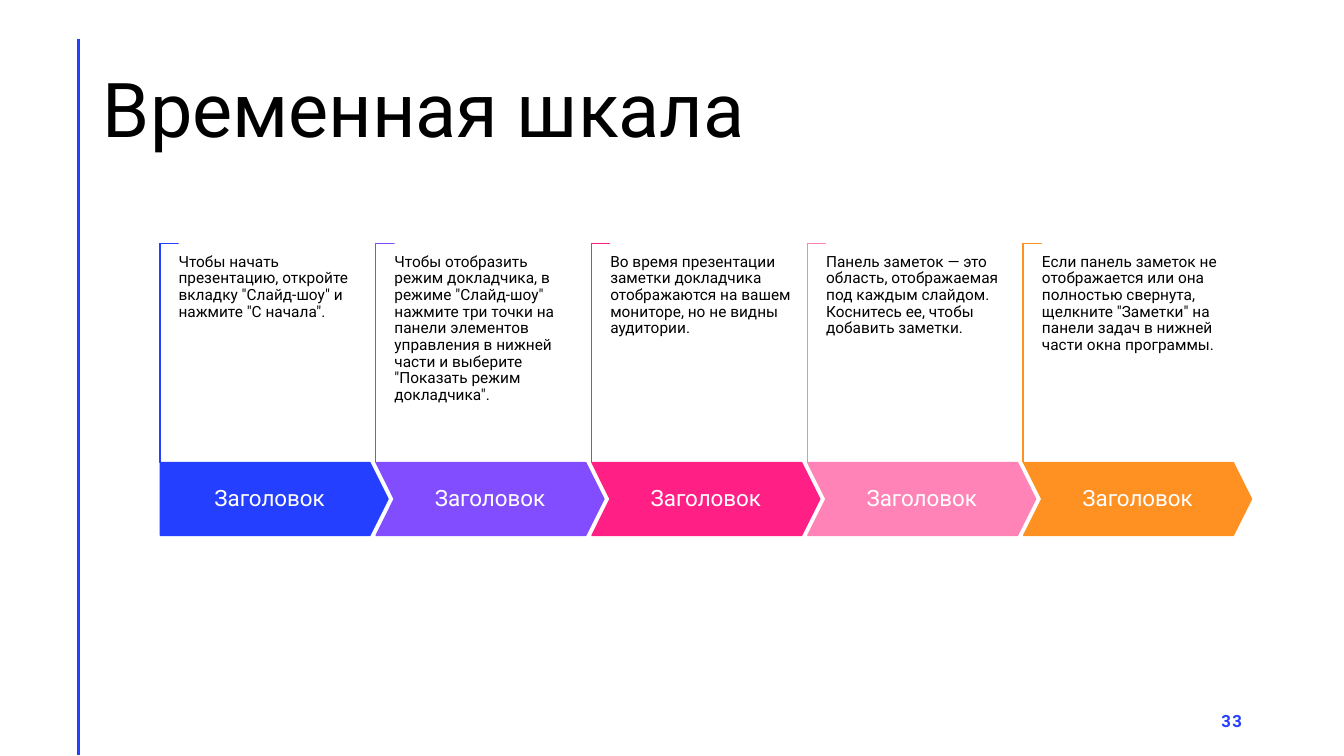
from dataclasses import dataclass
from lxml.etree import SubElement
from pptx import Presentation
from pptx.dml.color import RGBColor
from pptx.enum.shapes import MSO_CONNECTOR, MSO_SHAPE
from pptx.enum.text import MSO_ANCHOR, PP_ALIGN
from pptx.oxml.ns import qn
from pptx.util import Cm, Pt


@dataclass(frozen=True)
class Theme:
    font: str = "Roboto"
    ink: str = "000000"
    paper: str = "FFFFFF"
    accent: str = "243FFF"
    steps: tuple = ("243FFF", "814DFF", "FF1F85", "FF83B6", "FF9022")
    title_size: int = 54
    label_size: int = 16
    note_size: int = 11
    number_size: int = 12


theme = Theme()


def write(frame, words, size, color, align=PP_ALIGN.LEFT, spacing=0.9):
    frame.word_wrap = True
    paragraph = frame.paragraphs[0]
    paragraph.alignment = align
    paragraph.line_spacing = spacing
    run = paragraph.add_run()
    run.text = words
    run.font.name = theme.font
    run.font.size = Pt(size)
    run.font.color.rgb = RGBColor.from_string(color)
    return run


def paint(part, fill, line):
    part.shadow.inherit = False
    part.fill.solid()
    part.fill.fore_color.rgb = RGBColor.from_string(fill)
    part.line.color.rgb = RGBColor.from_string(line)
    part.line.width = Pt(1)


prs = Presentation()
prs.slide_width = Cm(33.87)
prs.slide_height = Cm(19.05)
slide = prs.slides.add_slide(prs.slide_layouts[5])
shapes = slide.shapes

margin_rule = shapes.add_connector(MSO_CONNECTOR.STRAIGHT, Cm(1.98), Cm(0.98), Cm(1.98), Cm(19.03))
margin_rule.line.color.rgb = RGBColor.from_string(theme.accent)
margin_rule.line.width = Pt(2)
SubElement(margin_rule._element.spPr, qn("a:effectLst"))

heading = shapes.title
heading.left, heading.top, heading.width, heading.height = Cm(2.34), Cm(1.02), Cm(29.21), Cm(3.68)
heading.text_frame.vertical_anchor = MSO_ANCHOR.MIDDLE
write(heading.text_frame, "Временная шкала", theme.title_size, theme.ink)

page_number = shapes.add_textbox(Cm(23.93), Cm(17.65), Cm(7.62), Cm(1.02))
page_number.text_frame.vertical_anchor = MSO_ANCHOR.MIDDLE
digits = write(page_number.text_frame, "33", theme.number_size, theme.accent, PP_ALIGN.RIGHT, 1.0)
digits.font.bold = True
digits._r.get_or_add_rPr().set("spc", "100")

notes = (
    'Чтобы начать презентацию, откройте вкладку "Слайд-шоу" и нажмите "С начала".',
    'Чтобы отобразить режим докладчика, в режиме "Слайд-шоу" нажмите три точки на панели '
    'элементов управления в нижней части и выберите "Показать режим докладчика".',
    "Во время презентации заметки докладчика отображаются на вашем мониторе, но не видны аудитории.",
    "Панель заметок — это область, отображаемая под каждым слайдом. Коснитесь ее, чтобы добавить заметки.",
    'Если панель заметок не отображается или она полностью свернута, щелкните "Заметки" '
    "на панели задач в нижней части окна программы.",
)
first_left, pitch = 4.04, 5.44

for index, (note, color) in enumerate(zip(notes, theme.steps)):
    left = first_left + index * pitch

    bracket = shapes.add_shape(MSO_SHAPE.CORNER, Cm(left - 2.54), Cm(8.66), Cm(5.51), Cm(0.46))
    bracket.rotation = 90
    bracket.adjustments[0] = bracket.adjustments[1] = 0.01
    paint(bracket, theme.paper, color)

    outline = MSO_SHAPE.CHEVRON if index else MSO_SHAPE.PENTAGON
    step = shapes.add_shape(outline, Cm(left), Cm(11.66), Cm(5.74), Cm(1.83))
    step.adjustments[0] = 0.25
    paint(step, color, color)
    step.text_frame.vertical_anchor = MSO_ANCHOR.MIDDLE
    step.text_frame.margin_top = step.text_frame.margin_bottom = 0
    write(step.text_frame, "Заголовок", theme.label_size, theme.paper, PP_ALIGN.CENTER)

    description = shapes.add_textbox(Cm(left + 0.46), Cm(6.4), Cm(4.65), Cm(3.94))
    body = description.text_frame
    body.margin_left = body.margin_top = body.margin_right = body.margin_bottom = 0
    write(body, note, theme.note_size, theme.ink)

prs.save("out.pptx")
